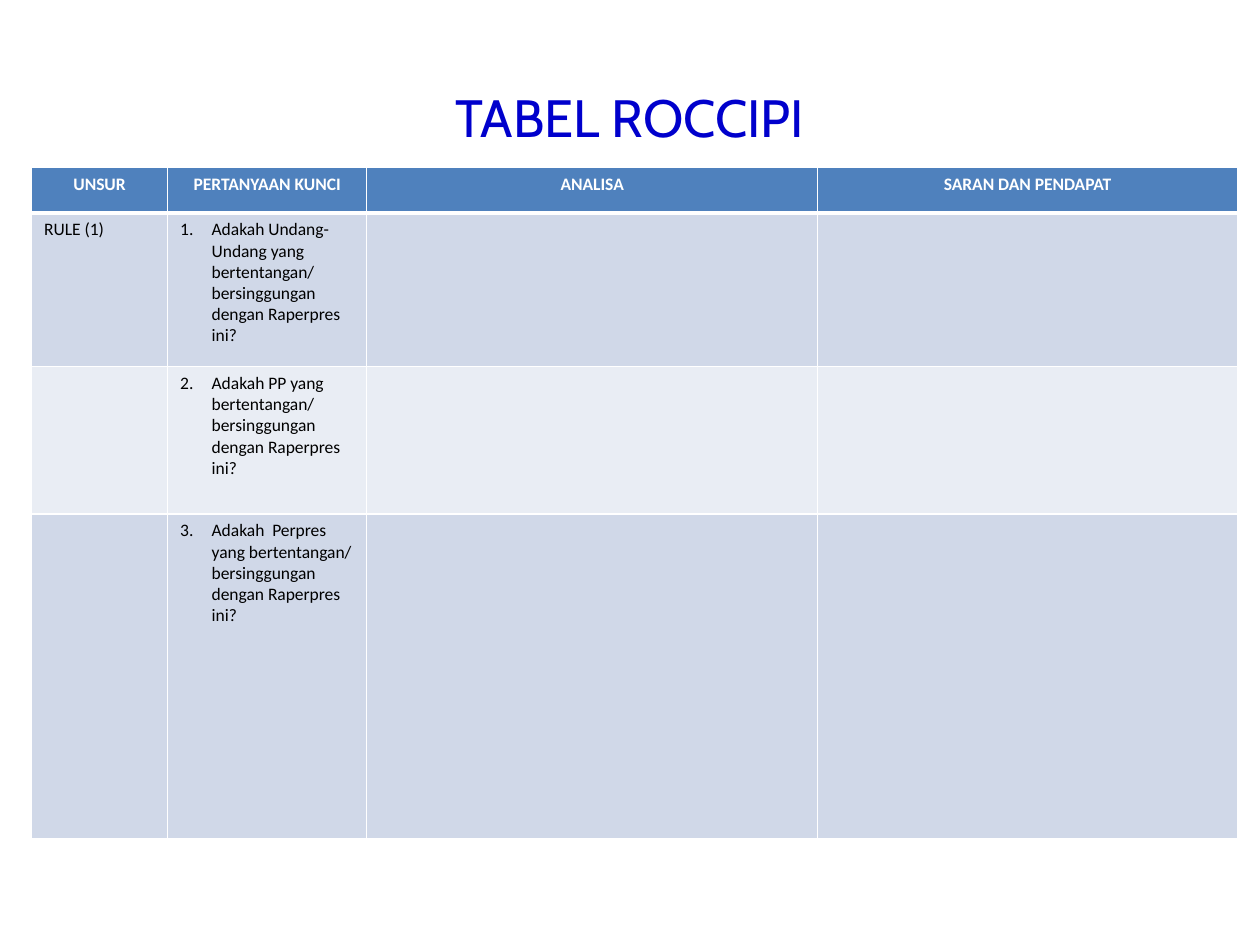
from pptx import Presentation
from pptx.dml.color import RGBColor
from pptx.enum import text
from pptx.oxml.ns import qn
from pptx.util import Inches, Pt
from lxml import etree

BLUE = RGBColor(0x00, 0x00, 0xCC)
HEADER = RGBColor(0x4F, 0x81, 0xBD)
BANDS = [RGBColor(0xD0, 0xD8, 0xE8), RGBColor(0xE9, 0xED, 0xF4)]
BLACK = RGBColor(0, 0, 0)
WHITE = RGBColor(0xFF, 0xFF, 0xFF)

COLUMN_WIDTHS = [1.08, 1.58, 3.58, 3.33]
ROW_HEIGHTS = [0.36, 1.22, 1.17, 2.58]
HEADINGS = ["UNSUR", "PERTANYAAN KUNCI", "ANALISA", "SARAN DAN PENDAPAT"]
QUESTIONS = [
    "Adakah Undang-Undang yang bertentangan/ bersinggungan dengan Raperpres ini?",
    "Adakah PP yang bertentangan/ bersinggungan dengan Raperpres ini?",
    "Adakah  Perpres yang bertentangan/ bersinggungan dengan Raperpres ini?",
]


def number_paragraph(para, number):
    """Give the paragraph a hanging automatic number."""
    props = para._p.get_or_add_pPr()
    props.set("marL", str(Inches(0.25)))
    props.set("indent", str(-Inches(0.25)))
    etree.SubElement(props, qn("a:buFont"), typeface="+mj-lt")
    etree.SubElement(props, qn("a:buAutoNum"), type="arabicPeriod", startAt=str(number))


def write(frame, words, size=10, font="Calibri", color=BLACK, bold=False,
          align=text.PP_ALIGN.LEFT, number=None):
    para = frame.paragraphs[0]
    para.alignment = align
    if number:
        number_paragraph(para, number)
    span = para.add_run()
    span.text = words
    span.font.name = font
    span.font.size = Pt(size)
    span.font.bold = bold
    span.font.color.rgb = color


def add_title(page, words):
    box = page.shapes.add_textbox(Inches(0.5), Inches(0.3), Inches(9), Inches(1.25))
    frame = box.text_frame
    frame.word_wrap = True
    frame.vertical_anchor = text.MSO_ANCHOR.MIDDLE
    write(frame, words, size=30, font="Cabin", color=BLUE, align=text.PP_ALIGN.CENTER)


def style_cell(cell, fill, top=1, bottom=1):
    """Draw white borders, with top and bottom widths in points, and fill the cell."""
    props = cell._tc.get_or_add_tcPr()
    for side, width in (("L", 1), ("R", 1), ("T", top), ("B", bottom)):
        line = etree.SubElement(props, qn(f"a:ln{side}"), w=str(Pt(width)))
        solid = etree.SubElement(line, qn("a:solidFill"))
        etree.SubElement(solid, qn("a:srgbClr"), val=str(WHITE))
    cell.fill.solid()
    cell.fill.fore_color.rgb = fill


def add_analysis_table(page):
    table = page.shapes.add_table(
        len(ROW_HEIGHTS), len(COLUMN_WIDTHS), Inches(0.25), Inches(1.33),
        Inches(sum(COLUMN_WIDTHS)), Inches(sum(ROW_HEIGHTS))).table
    for column, width in zip(table.columns, COLUMN_WIDTHS):
        column.width = Inches(width)
    for index, (row, height) in enumerate(zip(table.rows, ROW_HEIGHTS)):
        row.height = Inches(height)
        for cell in row.cells:
            if index == 0:
                style_cell(cell, HEADER, bottom=3)
            else:
                style_cell(cell, BANDS[(index - 1) % 2], top=3 if index == 1 else 1)

    for column, heading in enumerate(HEADINGS):
        write(table.cell(0, column).text_frame, heading, color=WHITE, bold=True,
              align=text.PP_ALIGN.CENTER)
    write(table.cell(1, 0).text_frame, "RULE (1)")
    for number, question in enumerate(QUESTIONS, start=1):
        write(table.cell(number, 1).text_frame, question, number=number)


def main():
    deck = Presentation()
    deck.slide_width, deck.slide_height = Inches(10), Inches(7.5)
    page = deck.slides.add_slide(deck.slide_layouts[6])
    add_title(page, "TABEL ROCCIPI")
    add_analysis_table(page)
    deck.save("out.pptx")


if __name__ == "__main__":
    main()
